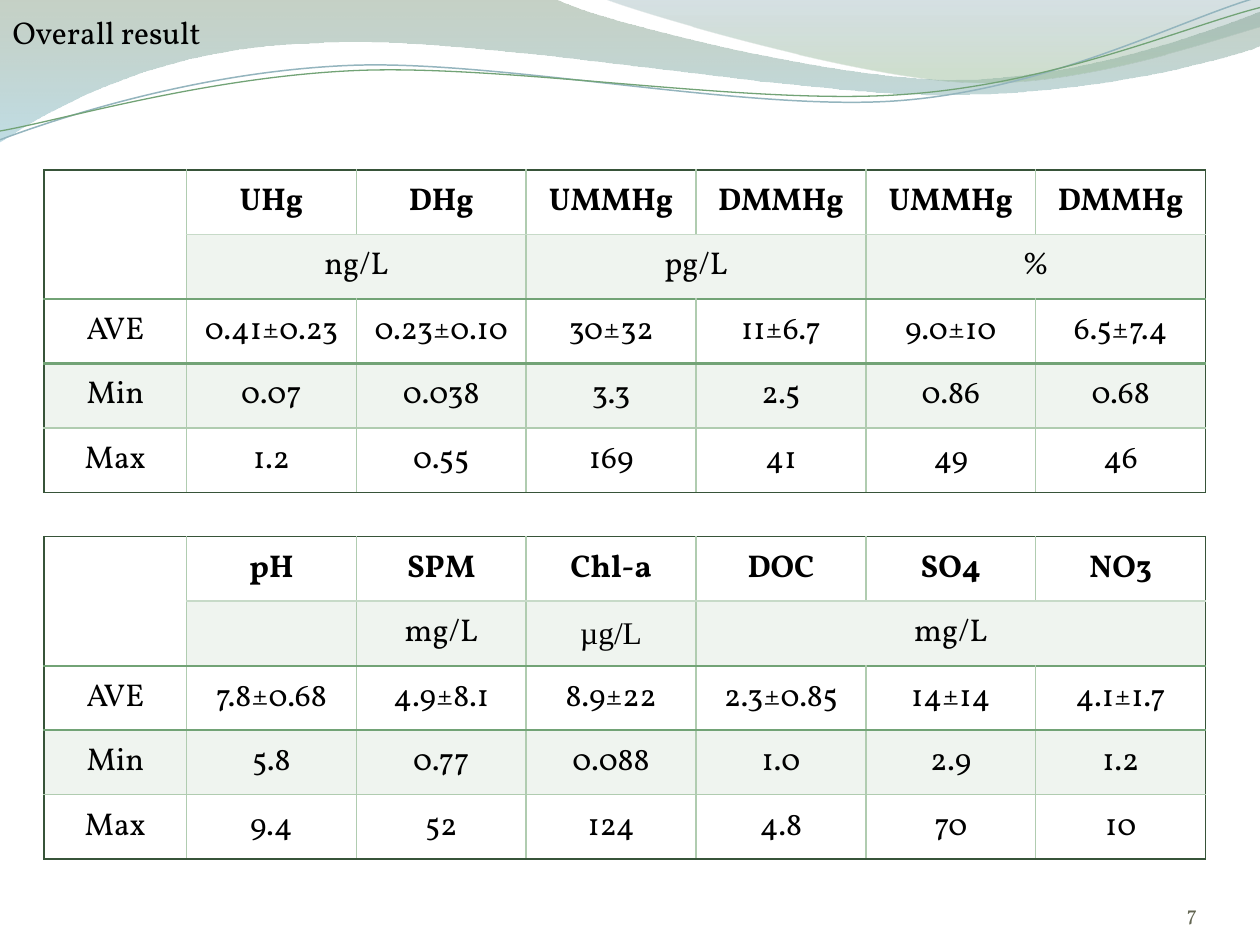
from lxml import etree
from pptx import Presentation
from pptx.dml.color import RGBColor
from pptx.enum import text
from pptx.oxml.ns import qn
from pptx.util import Inches, Pt

FONT = "Vollkorn"
COLORS = {"text": "000000", "number": "626551", "frame": "375439",
          "grid": "B0CCB0", "header": "C7DAC8", "rule": "72A376",
          "blue": "94B5BE"}

# Each wave has a start point, then lines (x, y) and curves (x1, y1, x2, y2, x, y).
BANDS = [
    {"start": (0, 0),
     "segments": [(4.4, -0.01),
                  (4.76, 0.17, 6.64, 0.63, 7.58, 0.63),
                  (8.53, 0.63, 9.58, 0.26, 10, 0.09),
                  (10.01, 0.36),
                  (9.83, 0.44, 8.7, 0.76, 7.46, 0.75),
                  (6.22, 0.75, 3.82, 0.28, 2.57, 0.34),
                  (1.29, 0.36, 0.46, 0.83, -0.01, 1.13),
                  (0, 0)],
     "stops": [(0, "809980", 45), (1, "8DC1CF", 55)]},
    {"start": (4.79, -0.01),
     "segments": [(5.09, 0.11, 6.82, 0.62, 7.69, 0.65),
                  (8.56, 0.69, 9.61, 0.32, 10, 0.21),
                  (10, 0),
                  (4.79, -0.01)],
     "stops": [(0, "779BA4", 30), (0.8, "96B996", 45)]},
]
STRANDS = [
    {"start": (0, 1.11),
     "segments": [(0.48, 0.93, 1.58, 0.57, 2.77, 0.52),
                  (3.95, 0.47, 5.93, 0.89, 7.13, 0.8),
                  (8.33, 0.71, 9.38, 0.15, 9.98, -0.02)],
     "line": ("blue", 0.85)},
    {"start": (0, 1.04),
     "segments": [(0.47, 0.96, 1.64, 0.61, 2.83, 0.56),
                  (4.03, 0.51, 5.97, 0.84, 7.17, 0.75),
                  (8.36, 0.67, 9.41, 0.21, 10, 0.06)],
     "line": ("rule", 0.75)},
]

# None marks a cell covered by a merge; spans map (row, column) to (rows, columns).
TABLES = [
    {"top": 1.35,
     "rows": [["", "UHg", "DHg", "UMMHg", "DMMHg", "UMMHg", "DMMHg"],
              [None, "ng/L", None, "pg/L", None, "%", None],
              ["AVE", "0.41±0.23", "0.23±0.10", "30±32", "11±6.7", "9.0±10", "6.5±7.4"],
              ["Min", "0.07", "0.038", "3.3", "2.5", "0.86", "0.68"],
              ["Max", "1.2", "0.55", "169", "41", "49", "46"]],
     "spans": {(0, 0): (2, 1), (1, 1): (1, 2), (1, 3): (1, 2), (1, 5): (1, 2)}},
    {"top": 4.26,
     "rows": [["", "pH", "SPM", "Chl-a", "DOC", "SO4", "NO3"],
              [None, "", "mg/L", "µg/L", "mg/L", None, None],
              ["AVE", "7.8±0.68", "4.9±8.1", "8.9±22", "2.3±0.85", "14±14", "4.1±1.7"],
              ["Min", "5.8", "0.77", "0.088", "1.0", "2.9", "1.2"],
              ["Max", "9.4", "52", "124", "4.8", "70", "10"]],
     "spans": {(0, 0): (2, 1), (1, 4): (1, 3)}},
]
OTHER_FONTS = {"µg/L": "Times New Roman"}
LEFT, WIDTH, HEIGHT, LABEL_WIDTH = 0.35, 9.22, 2.56, 1.13


def set_alpha(element, percent):
    etree.SubElement(element, qn("a:alpha"), val=str(percent * 1000))


def style_text(p, size, color, font=FONT, bold=False):
    for r in p.runs:
        r.font.size, r.font.name, r.font.bold = Pt(size), font, bold
        r.font.color.rgb = RGBColor.from_string(COLORS[color])


def add_wave(s, start, segments, close):
    """Draw through all points, then join each group of three as one cubic curve."""
    builder = s.shapes.build_freeform(*map(Inches, start))
    builder.add_line_segments([(Inches(x), Inches(y)) for segment in segments
                               for x, y in zip(segment[::2], segment[1::2])], close=close)
    sp = builder.convert_to_shape()
    sp.shadow.inherit = False
    lines = iter(list(sp._element.iter(qn("a:lnTo"))))
    for segment in segments:
        first = next(lines)
        if len(segment) == 6:
            first.tag = qn("a:cubicBezTo")
            for _ in range(2):
                extra = next(lines)
                first.append(extra[0])
                extra.getparent().remove(extra)
    return sp


def add_band(s, start, segments, stops):
    sp = add_wave(s, start, segments, close=True)
    sp.line.fill.background()
    sp.fill.gradient()
    sp.fill.gradient_angle = 270
    for stop, (position, color, _) in zip(sp.fill.gradient_stops, stops):
        stop.position = position
        stop.color.rgb = RGBColor.from_string(color)
    clrs = list(sp._element.spPr.iter(qn("a:srgbClr")))
    for clr, (_, _, alpha) in zip(clrs, stops):
        set_alpha(clr, alpha)


def add_strand(s, start, segments, line):
    sp = add_wave(s, start, segments, close=False)
    sp.fill.background()
    color, width = line
    sp.line.color.rgb = RGBColor.from_string(COLORS[color])
    sp.line.width = Pt(width)


def horizontal_border(edge, last):
    """Colour and width of the line above row number edge."""
    if edge in (0, last):
        return "frame", 1
    return {1: ("header", 1), 2: ("rule", 1.5), 3: ("rule", 1.5)}.get(edge, ("grid", 1))


def vertical_border(edge, last):
    return ("frame" if edge in (0, last) else "grid"), 1


def set_borders(cell, borders):
    for side, (color, width) in borders.items():
        ln = etree.SubElement(cell._tc.get_or_add_tcPr(), qn("a:ln" + side),
                              w=str(Pt(width)))
        fill = etree.SubElement(ln, qn("a:solidFill"))
        etree.SubElement(fill, qn("a:srgbClr"), val=COLORS[color])


def add_results(s, top, rows, spans):
    n_rows, n_cols = len(rows), len(rows[0])
    table = s.shapes.add_table(n_rows, n_cols, Inches(LEFT), Inches(top),
                               Inches(WIDTH), Inches(HEIGHT)).table
    table.first_row = table.horz_banding = False
    for i, column in enumerate(table.columns):
        column.width = Inches((WIDTH - LABEL_WIDTH) / (n_cols - 1) if i else LABEL_WIDTH)
    for (i, j), (height, width) in spans.items():
        table.cell(i, j).merge(table.cell(i + height - 1, j + width - 1))
    for i, row in enumerate(rows):
        for j, value in enumerate(row):
            if value is None:
                continue
            cell = table.cell(i, j)
            height, width = spans.get((i, j), (1, 1))
            set_borders(cell, {"L": vertical_border(j, n_cols),
                               "R": vertical_border(j + width, n_cols),
                               "T": horizontal_border(i, n_rows),
                               "B": horizontal_border(i + height, n_rows)})
            if i % 2:
                cell.fill.solid()
                cell.fill.fore_color.rgb = RGBColor.from_string(COLORS["grid"])
                set_alpha(cell._tc.tcPr.find(qn("a:solidFill"))[0], 20)
            else:
                cell.fill.background()
            cell.vertical_anchor = text.MSO_ANCHOR.MIDDLE
            if value:
                p = cell.text_frame.paragraphs[0]
                p.text, p.alignment = value, text.PP_ALIGN.CENTER
                style_text(p, 18, "text", OTHER_FONTS.get(value, FONT), bold=i == 0)


def add_page_number(s, number):
    tf = s.shapes.add_textbox(Inches(8.67), Inches(6.95), Inches(0.83), Inches(0.4)).text_frame
    tf.margin_left = tf.margin_top = tf.margin_right = tf.margin_bottom = 0
    tf.word_wrap, tf.vertical_anchor = True, text.MSO_ANCHOR.BOTTOM
    tf.text = number
    tf.paragraphs[0].alignment = text.PP_ALIGN.RIGHT
    style_text(tf.paragraphs[0], 12, "number")


def place_title(s, title):
    sp = s.shapes.title
    sp.left, sp.top, sp.width, sp.height = Inches(0), Inches(0.05), Inches(10), Inches(0.4)
    tf = sp.text_frame
    tf.text, tf.vertical_anchor = title, text.MSO_ANCHOR.TOP
    tf.auto_size = text.MSO_AUTO_SIZE.SHAPE_TO_FIT_TEXT
    tf.paragraphs[0].alignment = text.PP_ALIGN.LEFT
    style_text(tf.paragraphs[0], 18, "text")
    s.shapes._spTree.append(sp._element)  # bring in front of the waves


prs = Presentation()
prs.slide_width, prs.slide_height = Inches(10), Inches(7.5)
s = prs.slides.add_slide(prs.slide_layouts[5])
for band in BANDS:
    add_band(s, **band)
for strand in STRANDS:
    add_strand(s, **strand)
add_page_number(s, "7")
for results in TABLES:
    add_results(s, **results)
place_title(s, "Overall result")
prs.save("out.pptx")
